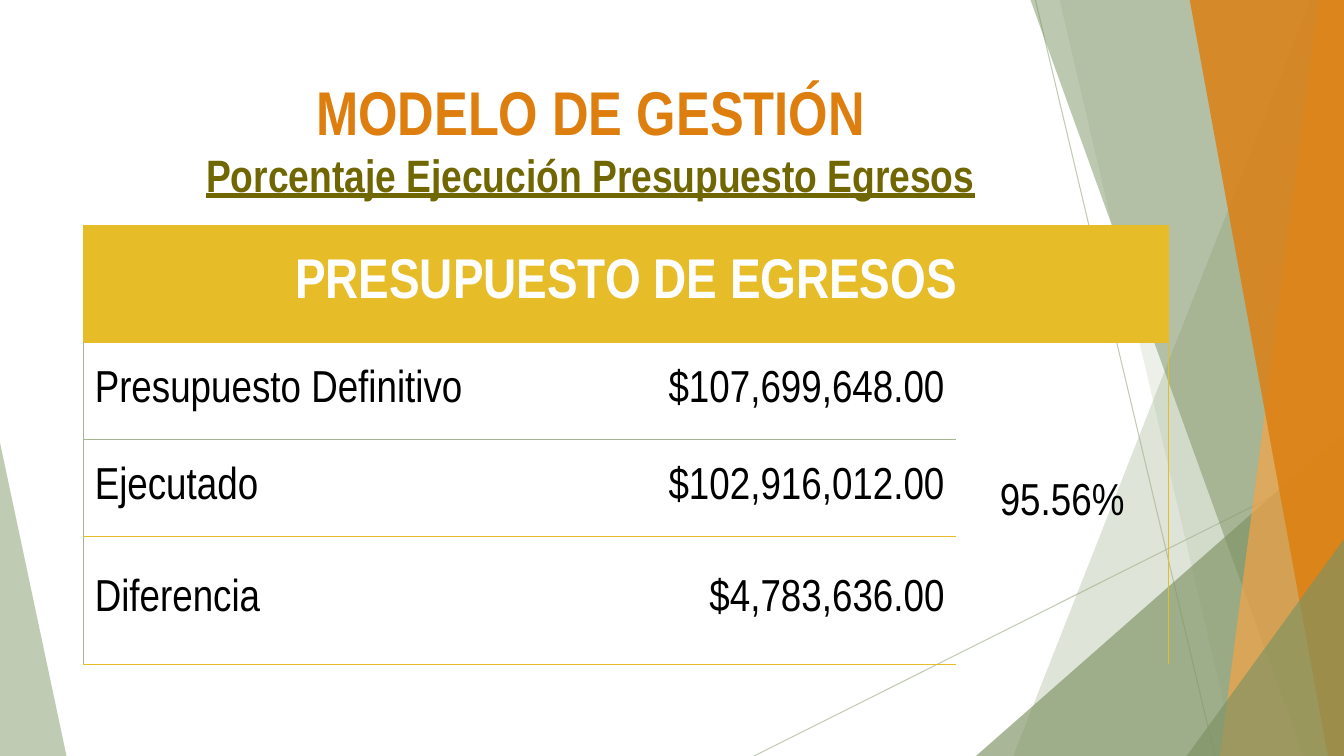
"""Build the slide on the execution of the expenditure budget."""
from dataclasses import dataclass

from lxml import etree
from pptx import Presentation
from pptx.dml.color import RGBColor
from pptx.enum.shapes import MSO_CONNECTOR
from pptx.enum.text import MSO_ANCHOR, PP_ALIGN
from pptx.oxml.ns import qn
from pptx.slide import Slide
from pptx.table import _Cell
from pptx.text.text import _Paragraph
from pptx.util import Inches, Pt

LEFT, CENTER, RIGHT = PP_ALIGN.LEFT, PP_ALIGN.CENTER, PP_ALIGN.RIGHT
TOP, MIDDLE = MSO_ANCHOR.TOP, MSO_ANCHOR.MIDDLE
STRAIGHT = MSO_CONNECTOR.STRAIGHT

WHITE = RGBColor(0xFF, 0xFF, 0xFF)
BLACK = RGBColor(0x00, 0x00, 0x00)
SAGE = RGBColor(0xA5, 0xB5, 0x92)
MOSS = RGBColor(0x7D, 0x92, 0x63)
AMBER = RGBColor(0xF3, 0xA4, 0x47)
ORANGE = RGBColor(0xDD, 0x7E, 0x0E)
OLIVE = RGBColor(0x70, 0x67, 0x02)
GOLD = RGBColor(0xE7, 0xBC, 0x29)

FONT = "Arial Narrow"
WIDTH, HEIGHT = Inches(13.33), Inches(7.5)
COLUMNS = (35.03, 29.86, 15.83)
ROWS = (15.47, 12.8, 12.8, 16.93)
Point = tuple[float, float]


@dataclass(frozen=True)
class Facet:
    """A translucent polygon, its corners in percent of the slide."""
    color: RGBColor
    opacity: int
    corners: tuple[Point, ...]


@dataclass(frozen=True)
class Ray:
    """A thin line between two points in percent of the slide."""
    start: Point
    end: Point


@dataclass(frozen=True)
class Entry:
    """The wording of one table cell and its alignment."""
    row: int
    column: int
    text: str
    align: PP_ALIGN


RAYS = (
    Ray((56.11, 100), (100, 60.93)),
    Ray((77.04, 0), (90.4, 100)),
)
LEFT_FACET = Facet(SAGE, 70, ((0, 58.53), (4.95, 100), (0, 100)))
RIGHT_FACETS = (
    Facet(SAGE, 36, ((97.52, 0), (75.39, 100), (100, 100), (100, 0))),
    Facet(SAGE, 20, ((78.84, 0), (91.97, 100), (100, 100), (100, 0))),
    Facet(MOSS, 66, ((72.62, 100), (100, 57.2), (100, 100))),
    Facet(MOSS, 50, ((76.67, 0), (97, 100), (100, 100), (100, 0))),
    Facet(AMBER, 70, ((98.12, 0), (90.77, 100), (100, 100), (100, 0))),
    Facet(ORANGE, 82, ((88.52, 0), (98.8, 100), (100, 100), (100, 0))),
    Facet(MOSS, 66, ((88.3, 100), (100, 71.33), (100, 100))),
)
ENTRIES = (
    Entry(0, 0, "PRESUPUESTO DE EGRESOS", CENTER),
    Entry(1, 0, "Presupuesto Definitivo", LEFT),
    Entry(1, 1, "$107,699,648.00", RIGHT),
    Entry(1, 2, "95.56%", CENTER),
    Entry(2, 0, "Ejecutado", LEFT),
    Entry(2, 1, "$102,916,012.00", RIGHT),
    Entry(3, 0, "Diferencia", LEFT),
    Entry(3, 1, "$4,783,636.00", RIGHT),
)


def across(share: float) -> int:
    """Turn a percentage of the slide's width into a length."""
    return round(WIDTH * share / 100)


def down(share: float) -> int:
    """Turn a percentage of the slide's height into a length."""
    return round(HEIGHT * share / 100)


def set_opacity(color: etree._Element, opacity: int) -> None:
    """Add an opacity in percent to a colour element."""
    etree.SubElement(color, qn("a:alpha"), val=str(opacity * 1000))


def draw_facet(page: Slide, facet: Facet) -> None:
    """Draw one translucent polygon."""
    first, *others = [(across(x), down(y)) for x, y in facet.corners]
    builder = page.shapes.build_freeform(*first)
    builder.add_line_segments(others, close=True)
    shape = builder.convert_to_shape()
    shape.shadow.inherit = False
    shape.line.fill.background()
    shape.fill.solid()
    shape.fill.fore_color.rgb = facet.color
    set_opacity(shape._element.spPr.find(".//" + qn("a:srgbClr")), facet.opacity)


def draw_ray(page: Slide, ray: Ray) -> None:
    """Draw one thin translucent line."""
    (x1, y1), (x2, y2) = ray.start, ray.end
    line = page.shapes.add_connector(STRAIGHT, across(x1), down(y1), across(x2), down(y2))
    line.line.color.rgb = SAGE
    line.line.width = Pt(0.75)
    properties = line._element.spPr
    set_opacity(properties.find(".//" + qn("a:srgbClr")), 70)
    etree.SubElement(properties, qn("a:effectLst"))


def write(para: _Paragraph, text: str, size: float, color: RGBColor,
          align: PP_ALIGN, bold: bool = False, underline: bool = False) -> None:
    """Fill a paragraph and format its text."""
    para.text = text
    para.alignment = align
    for span in para.runs:
        span.font.name = FONT
        span.font.size = Pt(size)
        span.font.bold = bold
        span.font.underline = underline
        span.font.color.rgb = color


def draw_title(page: Slide) -> None:
    """Draw the title and the underlined subtitle."""
    box = page.shapes.add_textbox(across(4.95), down(8.13), across(78.02), down(13.87))
    frame = box.text_frame
    frame.word_wrap = True
    frame.vertical_anchor = TOP
    frame.margin_top = Inches(0.12)
    write(frame.paragraphs[0], "MODELO DE GESTIÓN", 44.1, ORANGE, CENTER, bold=True)
    write(frame.add_paragraph(), "Porcentaje Ejecución Presupuesto Egresos",
          32.4, OLIVE, CENTER, bold=True, underline=True)


def set_borders(cell: _Cell, edges: dict[str, RGBColor]) -> None:
    """Draw the given edges of a cell and hide the rest."""
    properties = cell._tc.get_or_add_tcPr()
    for index, side in enumerate("LRTB"):
        edge = etree.Element(qn("a:ln" + side), w=str(Pt(1)))
        if side in edges:
            fill = etree.SubElement(edge, qn("a:solidFill"))
            etree.SubElement(fill, qn("a:srgbClr"), val=str(edges[side]))
        else:
            etree.SubElement(edge, qn("a:noFill"))
        properties.insert(index, edge)


def edges_at(row: int, column: int) -> dict[str, RGBColor]:
    """Give the visible edges of the cell at a grid position."""
    if row == 0:
        return dict.fromkeys("LRTB", GOLD)
    if column == 2:
        return {"R": GOLD, "T": GOLD, **({"B": GOLD} if row == 3 else {})}
    rules = (GOLD, SAGE, GOLD, GOLD)
    edges = {"T": rules[row - 1], "B": rules[row]}
    return {"L": SAGE, **edges} if column == 0 else edges


def draw_table(page: Slide) -> None:
    """Draw the budget table."""
    frame = page.shapes.add_table(len(ROWS), len(COLUMNS), across(6.23), down(29.87),
                                  across(sum(COLUMNS)), down(sum(ROWS)))
    table = frame.table
    table.first_row = table.horz_banding = False
    for column, share in zip(table.columns, COLUMNS):
        column.width = across(share)
    for row, share in zip(table.rows, ROWS):
        row.height = down(share)
    for row in range(len(ROWS)):
        for column in range(len(COLUMNS)):
            cell = table.cell(row, column)
            cell.vertical_anchor = MIDDLE
            cell.margin_left = cell.margin_right = Inches(0.11)
            cell.fill.background()
            if row == 0:
                cell.fill.solid()
                cell.fill.fore_color.rgb = GOLD
            set_borders(cell, edges_at(row, column))
    table.cell(0, 0).merge(table.cell(0, 2))
    table.cell(1, 2).merge(table.cell(3, 2))
    for entry in ENTRIES:
        heading = entry.row == 0
        para = table.cell(entry.row, entry.column).text_frame.paragraphs[0]
        write(para, entry.text, 40 if heading else 32,
              WHITE if heading else BLACK, entry.align, bold=heading)


def main() -> None:
    """Build and save the deck."""
    deck = Presentation()
    deck.slide_width, deck.slide_height = WIDTH, HEIGHT
    page = deck.slides.add_slide(deck.slide_layouts[6])
    draw_facet(page, LEFT_FACET)
    for ray in RAYS:
        draw_ray(page, ray)
    for facet in RIGHT_FACETS:
        draw_facet(page, facet)
    draw_title(page)
    draw_table(page)
    deck.save("out.pptx")


if __name__ == "__main__":
    main()
